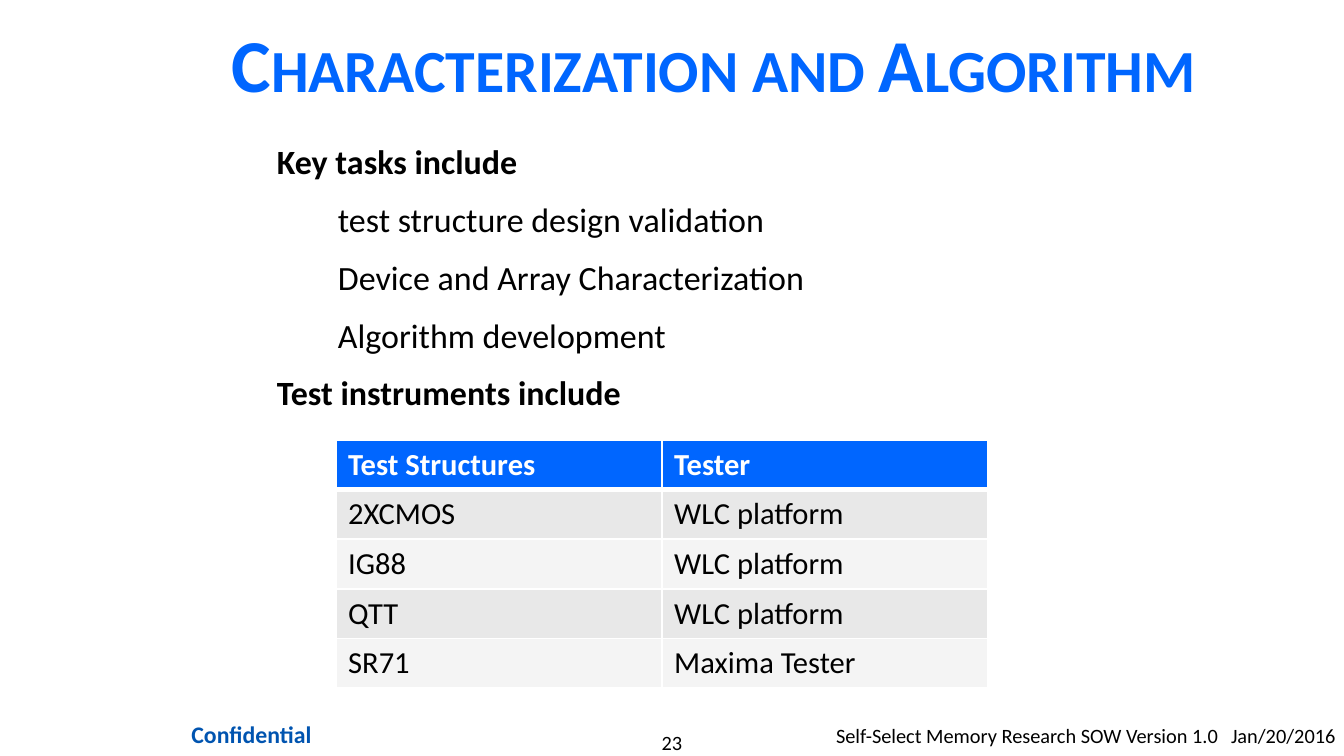
"""Build the characterization and algorithm slide with its tester table."""
from lxml.etree import SubElement
from pptx import Presentation
from pptx.dml.color import RGBColor
from pptx.enum.text import MSO_ANCHOR, PP_ALIGN
from pptx.oxml.ns import qn
from pptx.util import Pt

PX = 7484
BLUE, NAVY, BLACK, WHITE = "0066FF", "0054B0", "000000", "FFFFFF"


def color(code):
    return RGBColor.from_string(code)


def write(frame, text, size=20, ink=BLACK, bold=False, align=PP_ALIGN.LEFT,
          caps=False, level=0, before=0, more=False):
    para = frame.add_paragraph() if more else frame.paragraphs[0]
    para.alignment, para.level, para.space_before = align, level, Pt(before)
    props = para._p.get_or_add_pPr()
    props.set("marL", str(level * 61 * PX))
    props.set("indent", "0")
    run = para.add_run()
    run.text = text
    font = run.font
    font.name, font.size, font.bold = "Calibri", Pt(size), bold
    font.color.rgb = color(ink)
    if caps:
        run._r.get_or_add_rPr().set("cap", "small")


deck = Presentation()
deck.slide_width, deck.slide_height = 1344 * PX, 756 * PX
slide = deck.slides.add_slide(deck.slide_layouts[6])

frames = {}
for name, box, side, top in [
    ("label", (156, 714, 191, 42), 12, 6),
    ("footer", (836, 717, 392, 37), 0, 6),
    ("date", (1231, 717, 113, 37), 0, 6),
    ("number", (554, 730, 236, 24), 0, 0),
    ("title", (183, 16, 1061, 93), 12, 6),
    ("body", (265, 135, 979, 304), 12, 6),
]:
    frame = slide.shapes.add_textbox(*[n * PX for n in box]).text_frame
    frame.word_wrap = True
    frame.margin_left = frame.margin_right = side * PX
    frame.margin_top = frame.margin_bottom = top * PX
    frames[name] = frame

write(frames["label"], "Confidential", size=14, ink=NAVY, bold=True, align=PP_ALIGN.CENTER)
write(frames["footer"], "Self-Select Memory Research SOW Version 1.0", size=12)
write(frames["date"], "Jan/20/2016", size=12)
write(frames["number"], "23", size=12, align=PP_ALIGN.CENTER)
frames["title"].vertical_anchor = MSO_ANCHOR.MIDDLE
write(frames["title"], "Characterization and Algorithm", size=44, ink=BLUE, bold=True,
      align=PP_ALIGN.CENTER, caps=True)

tasks = [
    ("Key tasks include", 0),
    ("test structure design validation", 1),
    ("Device and Array Characterization", 1),
    ("Algorithm development", 1),
    ("Test instruments include", 0),
]
for i, (text, level) in enumerate(tasks):
    write(frames["body"], text, bold=level == 0, level=level, before=10 if i else 0, more=i > 0)

rows = [
    ("Test Structures", "Tester"),
    ("2XCMOS", "WLC platform"),
    ("IG88", "WLC platform"),
    ("QTT", "WLC platform"),
    ("SR71", "Maxima Tester"),
]
table = slide.shapes.add_table(len(rows), 2, 336 * PX, 440 * PX, 652 * PX, 248 * PX).table
for r, row in enumerate(rows):
    head = r == 0
    for c, text in enumerate(row):
        cell = table.cell(r, c)
        props = cell._tc.get_or_add_tcPr()
        for side in "LRTB":
            thick = (r, side) in [(0, "B"), (1, "T")]
            line = SubElement(props, qn("a:ln" + side), w=str(Pt(3 if thick else 1)))
            SubElement(SubElement(line, qn("a:solidFill")), qn("a:srgbClr"), val=WHITE)
        cell.fill.solid()
        cell.fill.fore_color.rgb = color(BLUE if head else "E8E8E8" if r % 2 else "F4F4F4")
        write(cell.text_frame, text, size=18, ink=WHITE if head else BLACK, bold=head)

deck.save("out.pptx")
